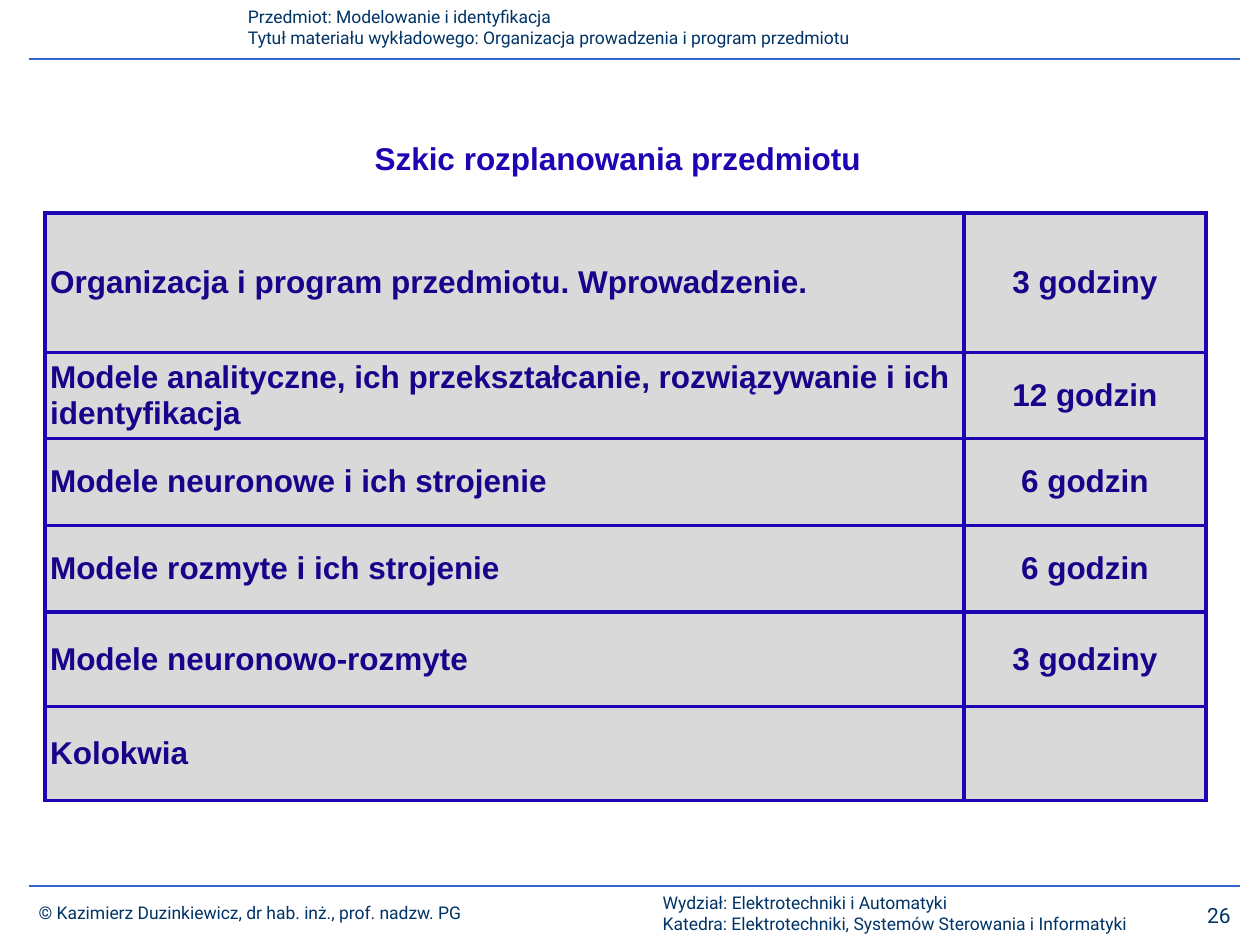
from lxml.etree import SubElement
from pptx import Presentation
from pptx.dml.color import RGBColor
from pptx.enum.shapes import MSO_CONNECTOR
from pptx.enum.text import MSO_ANCHOR, MSO_AUTO_SIZE, PP_ALIGN
from pptx.oxml.ns import qn
from pptx.util import Cm, Pt

COLORS = {
    "rule": "3366CC",
    "caption": "003366",
    "title": "1E05B3",
    "border": "1E05B3",
    "cell_text": "17048A",
    "cell_fill": "D9D9D9",
}
SCHEDULE = [
    ("Organizacja i program przedmiotu. Wprowadzenie.", "3 godziny", 2.82),
    ("Modele analityczne, ich przekształcanie, rozwiązywanie i ich identyfikacja",
     "12 godzin", 1.73),
    ("Modele neuronowe i ich strojenie", "6 godzin", 1.75),
    ("Modele rozmyte i ich strojenie", "6 godzin", 1.75),
    ("Modele neuronowo-rozmyte", "3 godziny", 1.9),
    ("Kolokwia", "", 1.9),
]
COLUMN_WIDTHS = (18.52, 4.88)


def color(name):
    return RGBColor.from_string(COLORS[name])


def format_text(text_frame, font, size, color_name, bold=False, align=PP_ALIGN.LEFT):
    for paragraph in text_frame.paragraphs:
        paragraph.alignment = align
        for run in paragraph.runs:
            run.font.name = font
            run.font.size = Pt(size)
            run.font.bold = bold
            run.font.color.rgb = color(color_name)


def add_title(slide, text):
    title = slide.shapes.title
    title.left, title.top, title.width, title.height = Cm(0.76), Cm(2.67), Cm(23.39), Cm(1.02)
    text_frame = title.text_frame
    text_frame.text = text
    text_frame.auto_size = MSO_AUTO_SIZE.NONE
    text_frame.vertical_anchor = MSO_ANCHOR.TOP
    format_text(text_frame, "Arial", 18, "title", True, PP_ALIGN.CENTER)


def add_caption(slide, text, left, top, width, height, size=10, align=PP_ALIGN.LEFT):
    box = slide.shapes.add_textbox(Cm(left), Cm(top), Cm(width), Cm(height))
    box.text_frame.word_wrap = True
    box.text_frame.text = text
    format_text(box.text_frame, "Roboto", size, "caption", align=align)


def add_rule(slide, y):
    line = slide.shapes.add_connector(
        MSO_CONNECTOR.STRAIGHT, Cm(0.58), Cm(y), Cm(25), Cm(y))
    line.line.color.rgb = color("rule")
    line.line.width = Pt(1.25)
    SubElement(line._element.spPr, qn("a:effectLst"))


def set_borders(cell):
    properties = cell._tc.get_or_add_tcPr()
    for side in ("lnL", "lnR", "lnT", "lnB"):
        line = SubElement(properties, qn(f"a:{side}"), w=str(Pt(2.25)))
        fill = SubElement(line, qn("a:solidFill"))
        SubElement(fill, qn("a:srgbClr"), val=COLORS["border"])


def fill_cell(cell, text, align):
    set_borders(cell)
    cell.fill.solid()
    cell.fill.fore_color.rgb = color("cell_fill")
    cell.vertical_anchor = MSO_ANCHOR.MIDDLE
    cell.text_frame.text = text
    format_text(cell.text_frame, "Arial", 18, "cell_text", True, align)


def add_schedule(slide):
    height = sum(row_height for _, _, row_height in SCHEDULE)
    table = slide.shapes.add_table(
        len(SCHEDULE), len(COLUMN_WIDTHS), Cm(0.91), Cm(4.29),
        Cm(sum(COLUMN_WIDTHS)), Cm(height)).table
    table.first_row = table.horz_banding = False
    for column, width in zip(table.columns, COLUMN_WIDTHS):
        column.width = Cm(width)
    for row, (topic, hours, row_height) in zip(table.rows, SCHEDULE):
        row.height = Cm(row_height)
        topic_cell, hours_cell = row.cells
        fill_cell(topic_cell, topic, PP_ALIGN.LEFT)
        topic_cell.margin_left = topic_cell.margin_right = Cm(0.1)
        topic_cell.margin_top = topic_cell.margin_bottom = Cm(0.1)
        fill_cell(hours_cell, hours, PP_ALIGN.CENTER)


def main():
    presentation = Presentation()
    presentation.slide_width, presentation.slide_height = Cm(25.4), Cm(19.05)
    slide = presentation.slides.add_slide(presentation.slide_layouts[5])

    add_caption(slide, "Przedmiot: Modelowanie i identyfikacja\n"
                "Tytuł materiału wykładowego: Organizacja prowadzenia i program przedmiotu",
                4.75, 0, 20.65, 1.12)
    for y in (1.19, 17.86):
        add_rule(slide, y)
    add_caption(slide, "© Kazimierz Duzinkiewicz, dr hab. inż., prof. nadzw. PG",
                0.53, 18.06, 10.21, 0.69)
    add_caption(slide, "Wydział: Elektrotechniki i Automatyki\n"
                "Katedra: Elektrotechniki, Systemów Sterowania i Informatyki",
                13.11, 17.86, 11.3, 1.12)
    add_caption(slide, "26", 23.75, 18.06, 1.65, 0.76, 12, PP_ALIGN.CENTER)
    add_title(slide, "Szkic rozplanowania przedmiotu")
    add_schedule(slide)
    presentation.save("out.pptx")


if __name__ == "__main__":
    main()
